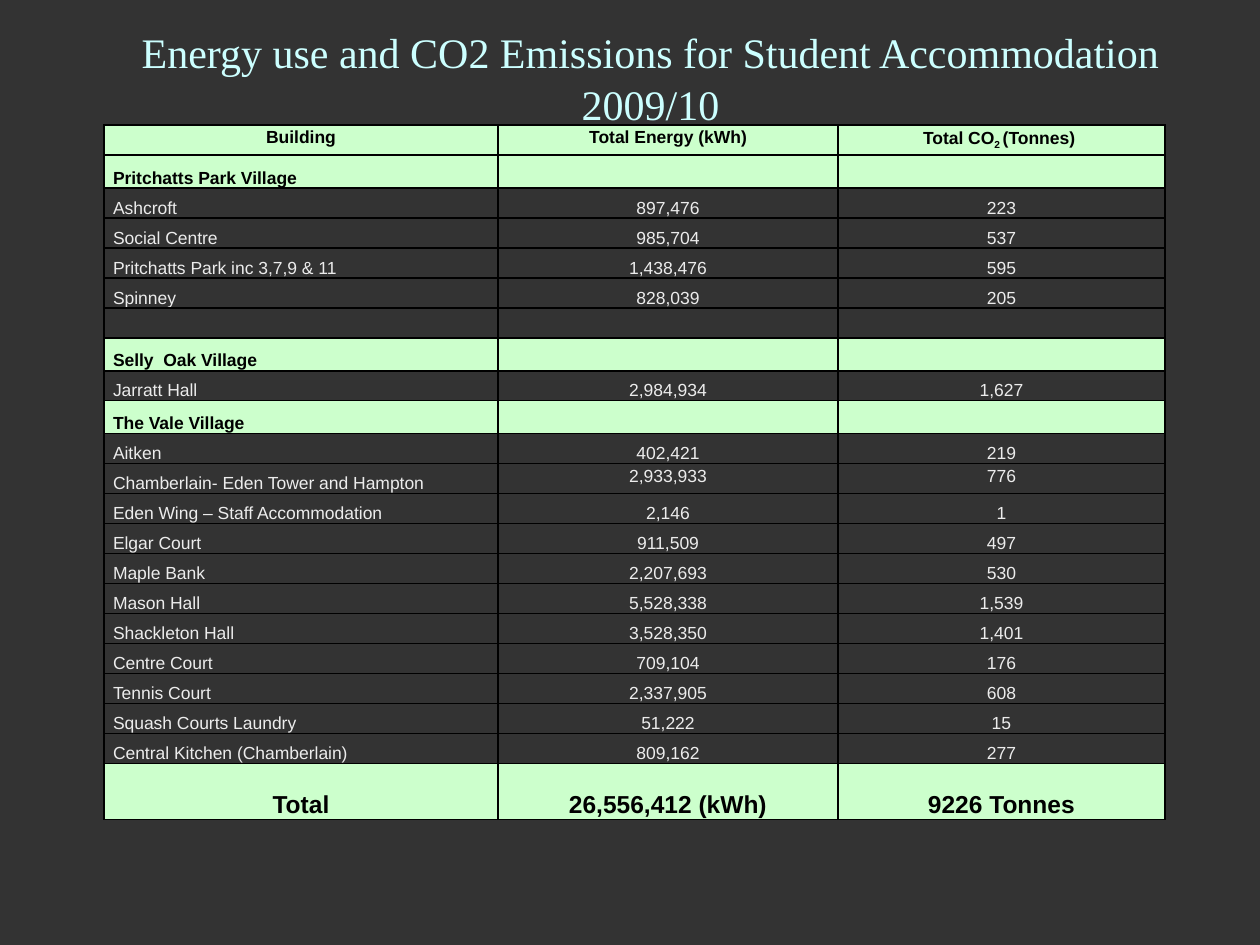
"""Build the slide on energy use and emissions of student housing."""
from dataclasses import dataclass

from lxml import etree
from pptx import Presentation
from pptx.dml.color import RGBColor
from pptx.enum.text import MSO_ANCHOR, PP_ALIGN
from pptx.oxml.ns import qn
from pptx.util import Emu, Pt

LEFT, CENTER = PP_ALIGN.LEFT, PP_ALIGN.CENTER
TOP, MIDDLE, BOTTOM = MSO_ANCHOR.TOP, MSO_ANCHOR.MIDDLE, MSO_ANCHOR.BOTTOM


@dataclass(frozen=True)
class Theme:
    back: str = "333333"
    title: str = "CCFFFF"
    band: str = "CCFFCC"
    dark: str = "000000"
    light: str = "ECECEC"
    serif: str = "Times New Roman"
    sans: str = "Arial"
    head: int = 24
    body: int = 10
    total: int = 14
    after: int = 10
    line: int = 1


@dataclass(frozen=True)
class Row:
    name: str = ""
    power: str = ""
    carbon: str = ""
    band: bool = False
    tall: int = 30
    size: int = Theme.body
    align: PP_ALIGN = LEFT
    anchor: MSO_ANCHOR = BOTTOM
    after: int = Theme.after
    lift: bool = False


def group(name: str) -> Row:
    return Row(name, band=True, tall=33)


THEME = Theme()
COLS = (394, 340, 327)
ROWS = (
    Row("Building", "Total Energy (kWh)", "Total CO_2 _(Tonnes) ", band=True,
        align=CENTER, anchor=TOP, after=0),
    group("Pritchatts Park Village"),
    Row("Ashcroft", "897,476", "223"),
    Row("Social Centre", "985,704", "537"),
    Row("Pritchatts Park inc 3,7,9 & 11", "1,438,476", "595"),
    Row("Spinney", "828,039", "205"),
    Row(),
    group("Selly  Oak Village"),
    Row("Jarratt Hall", "2,984,934", "1,627"),
    group("The Vale Village"),
    Row("Aitken", "402,421", "219"),
    Row("Chamberlain- Eden Tower and Hampton", "2,933,933", "776", lift=True),
    Row("Eden Wing – Staff Accommodation", "2,146", "1"),
    Row("Elgar Court", "911,509", "497"),
    Row("Maple Bank", "2,207,693", "530"),
    Row("Mason Hall", "5,528,338", "1,539"),
    Row("Shackleton Hall", "3,528,350", "1,401"),
    Row("Centre Court", "709,104", "176"),
    Row("Tennis Court", "2,337,905", "608"),
    Row("Squash Courts Laundry", "51,222", "15"),
    Row("Central Kitchen (Chamberlain)", "809,162", "277"),
    Row("Total", "26,556,412 (kWh)", "9226 Tonnes", band=True, tall=56,
        size=THEME.total, align=CENTER),
)


def px(count: int) -> Emu:
    return Emu(round(count * 914400 / 126))


def write(frame, text: str, *, size: int, color: str, font: str,
          bold: bool = False, align: PP_ALIGN = CENTER,
          space: float = 1.15, after: int = 0) -> None:
    """Write one paragraph, with parts between underscores set as subscript."""
    para = frame.paragraphs[0]
    para.alignment = align
    para.line_spacing = space
    para.space_after = Pt(after)
    if not text:
        end = etree.SubElement(para._p, qn("a:endParaRPr"))
        end.set("sz", str(size * 100))
        return
    for spot, part in enumerate(text.split("_")):
        run = para.add_run()
        run.text = part
        run.font.size = Pt(size)
        run.font.name = font
        run.font.bold = bold
        run.font.color.rgb = RGBColor.from_string(color)
        if spot % 2:
            run._r.get_or_add_rPr().set("baseline", "-25000")


def edge(cell) -> None:
    """Draw a thin dark line on each side of a cell."""
    props = cell._tc.get_or_add_tcPr()
    for side in ("lnL", "lnR", "lnT", "lnB"):
        line = etree.SubElement(props, qn(f"a:{side}"), w=str(Pt(THEME.line)))
        fill = etree.SubElement(line, qn("a:solidFill"))
        etree.SubElement(fill, qn("a:srgbClr"), val=THEME.dark)


def draw(cell, row: Row, text: str, first: bool) -> None:
    """Fill and label one cell of the table."""
    edge(cell)
    if row.band:
        cell.fill.solid()
        cell.fill.fore_color.rgb = RGBColor.from_string(THEME.band)
    else:
        cell.fill.background()
    cell.margin_left = cell.margin_right = px(9)
    cell.margin_top = cell.margin_bottom = 0
    cell.vertical_anchor = TOP if row.lift and not first else row.anchor
    write(cell.text_frame, text, size=row.size, font=THEME.sans,
          color=THEME.dark if row.band else THEME.light, bold=row.band,
          align=row.align if first else CENTER,
          after=0 if first else row.after)


def grid(slide) -> None:
    """Add the table of buildings."""
    tall = sum(row.tall for row in ROWS)
    table = slide.shapes.add_table(len(ROWS), len(COLS), px(104), px(125),
                                   px(sum(COLS)), px(tall)).table
    table.first_row = table.horz_banding = False
    for col, wide in zip(table.columns, COLS):
        col.width = px(wide)
    for y, row in enumerate(ROWS):
        table.rows[y].height = px(row.tall)
        for x, text in enumerate((row.name, row.power, row.carbon)):
            draw(table.cell(y, x), row, text, x == 0)


def main() -> None:
    """Build and save the slide."""
    deck = Presentation()
    deck.slide_width, deck.slide_height = px(1260), px(945)
    slide = deck.slides.add_slide(deck.slide_layouts[6])
    slide.background.fill.solid()
    slide.background.fill.fore_color.rgb = RGBColor.from_string(THEME.back)
    frame = slide.shapes.add_textbox(px(115), px(26), px(1071), px(101)).text_frame
    frame.word_wrap = True
    frame.vertical_anchor = MIDDLE
    write(frame, "Energy use and CO2 Emissions for Student Accommodation 2009/10",
          size=THEME.head, color=THEME.title, font=THEME.serif, space=1.05)
    grid(slide)
    deck.save("out.pptx")


if __name__ == "__main__":
    main()
